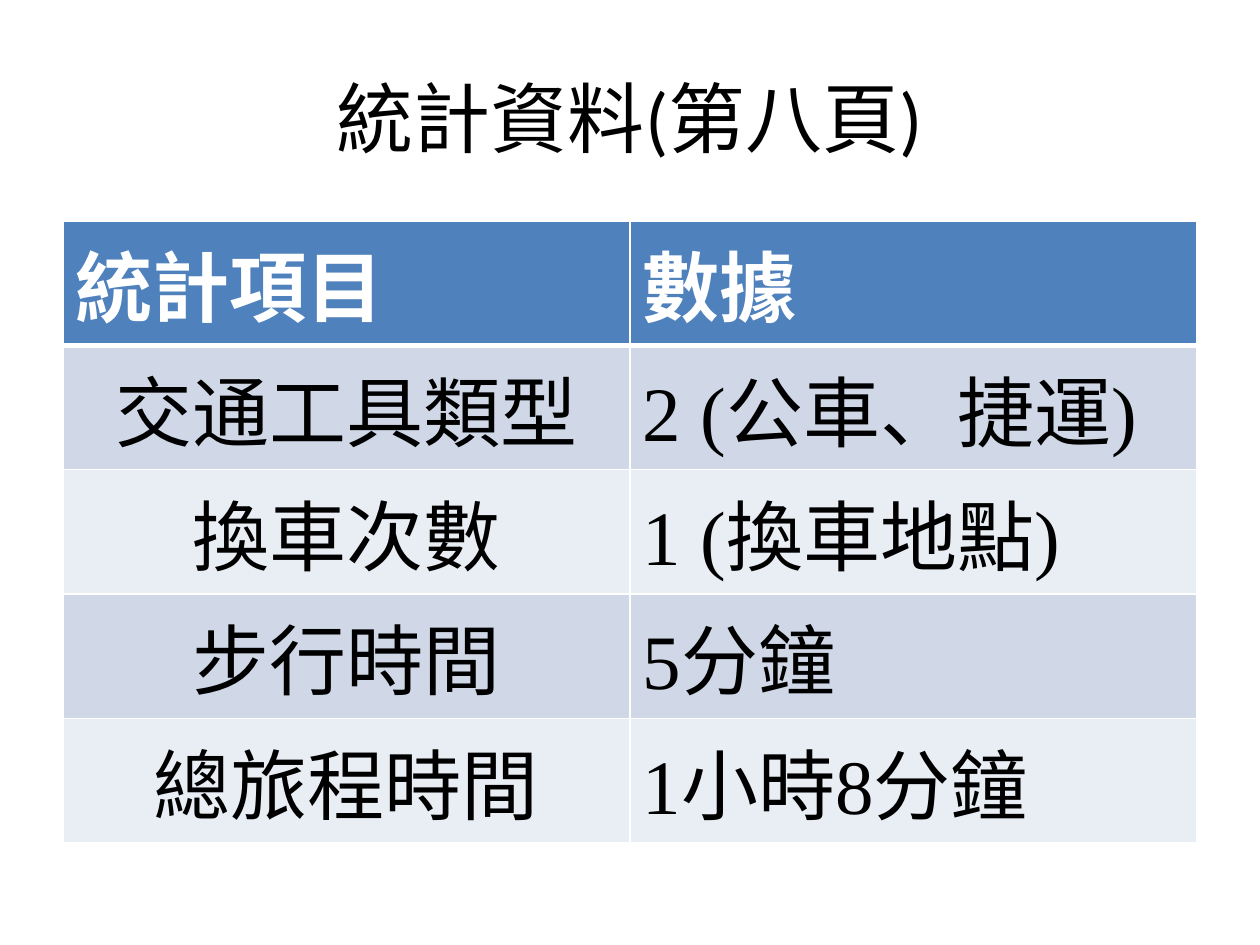
"""Build the trip statistics slide: a title above a two-column table."""
from dataclasses import dataclass

import pptx
import pptx.dml.color
import pptx.enum.text
import pptx.oxml
import pptx.oxml.ns
import pptx.util

PX_PER_INCH = 126
COLOURS = {"header": "4F81BD", "odd": "D0D8E8", "even": "E9EDF4",
           "white": "FFFFFF", "black": "000000"}
ALIGN = pptx.enum.text.PP_ALIGN
ANCHOR = pptx.enum.text.MSO_ANCHOR
CJK = "Noto Sans CJK SC"
CJK_BODY = "Noto Sans CJK JP"


@dataclass
class TextStyle:
    latin: str
    east_asian: str
    colour: str
    bold: bool = False
    align: ALIGN = ALIGN.LEFT


@dataclass
class Row:
    label: str
    value: str


TITLE = TextStyle("Calibri", CJK, "black", align=ALIGN.CENTER)
HEADER = TextStyle(CJK, CJK, "white", bold=True)
LABEL = TextStyle(CJK_BODY, CJK_BODY, "black", align=ALIGN.CENTER)
VALUE = TextStyle("Times New Roman", CJK_BODY, "black")
ROWS = [
    Row("統計項目", "數據"),
    Row("交通工具類型", "2 (公車、捷運)"),
    Row("換車次數", "1 (換車地點)"),
    Row("步行時間", "5分鐘"),
    Row("總旅程時間", "1小時8分鐘"),
]


def px(length: int) -> int:
    return round(pptx.util.Inches(1) * length / PX_PER_INCH)


def rgb(name: str) -> pptx.dml.color.RGBColor:
    return pptx.dml.color.RGBColor.from_string(COLOURS[name])


def write(frame, text: str, style: TextStyle) -> None:
    para = frame.paragraphs[0]
    para.alignment = style.align
    span = para.add_run()
    span.text = text
    formats = {"name": style.latin, "size": pptx.util.Pt(44), "bold": style.bold}
    for name, value in formats.items():
        setattr(span.font, name, value)
    span.font.color.rgb = rgb(style.colour)
    properties = span.font._element
    east_asian = properties.makeelement(
        pptx.oxml.ns.qn("a:ea"), {"typeface": style.east_asian})
    properties.find(pptx.oxml.ns.qn("a:latin")).addnext(east_asian)


def set_borders(cell, top: int, bottom: int) -> None:
    properties = cell._tc.get_or_add_tcPr()
    widths = {"lnL": 1, "lnR": 1, "lnT": top, "lnB": bottom}
    for position, (side, width) in enumerate(widths.items()):
        line = pptx.oxml.parse_xml(
            f'<a:{side} {pptx.oxml.ns.nsdecls("a")} w="{pptx.util.Pt(width)}">'
            f'<a:solidFill><a:srgbClr val="{COLOURS["white"]}"/></a:solidFill>'
            f'</a:{side}>')
        properties.insert(position, line)


def fill_cell(cell, text: str, style: TextStyle, index: int) -> None:
    fill_name = "header" if index == 0 else "odd" if index % 2 else "even"
    cell.fill.solid()
    cell.fill.fore_color.rgb = rgb(fill_name)
    set_borders(cell, top=3 if index == 1 else 1, bottom=3 if index == 0 else 1)
    write(cell.text_frame, text, style)


def add_title(page, text: str) -> None:
    box = page.shapes.title
    formats = {"left": px(63), "top": px(38), "width": px(1134), "height": px(158)}
    for name, value in formats.items():
        setattr(box, name, value)
    box.text_frame.vertical_anchor = ANCHOR.MIDDLE
    write(box.text_frame, text, TITLE)


def add_statistics(page, rows: list[Row]) -> None:
    table = page.shapes.add_table(
        len(rows), 2, px(63), px(221), px(1134), px(124 * len(rows))).table
    for index, row in enumerate(rows):
        styles = (HEADER, HEADER) if index == 0 else (LABEL, VALUE)
        for column, text in enumerate((row.label, row.value)):
            fill_cell(table.cell(index, column), text, styles[column], index)


def main() -> None:
    deck = pptx.Presentation()
    deck.slide_width, deck.slide_height = px(1260), px(945)
    page = deck.slides.add_slide(deck.slide_layouts.get_by_name("Title Only"))
    add_title(page, "統計資料(第八頁)")
    add_statistics(page, ROWS)
    deck.save("out.pptx")


if __name__ == "__main__":
    main()
